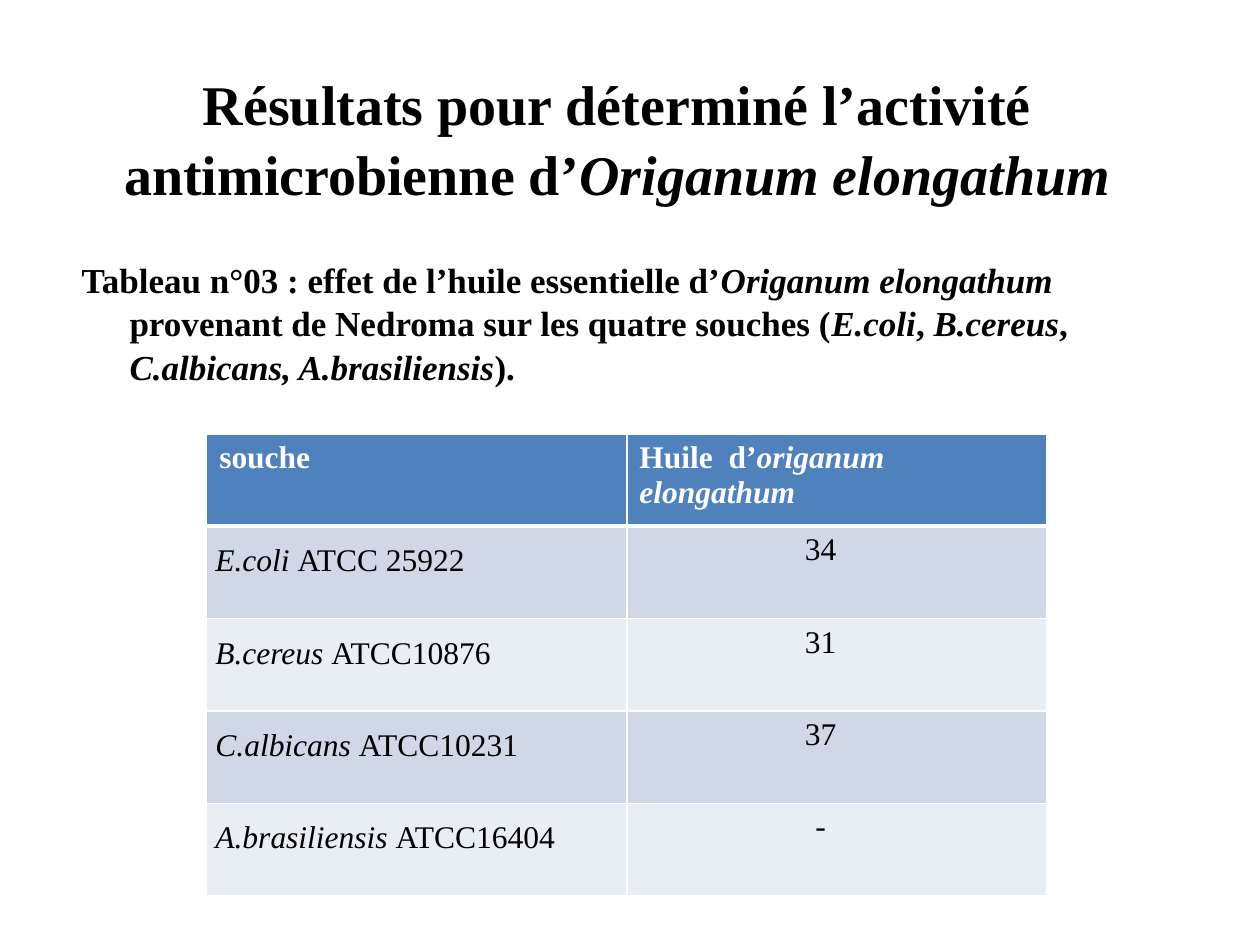
from lxml import etree
from pptx import Presentation
from pptx.dml.color import RGBColor
from pptx.enum.text import MSO_ANCHOR, PP_ALIGN
from pptx.oxml.ns import qn
from pptx.util import Inches, Pt

CENTER, JUSTIFY, LEFT = PP_ALIGN.CENTER, PP_ALIGN.JUSTIFY, PP_ALIGN.LEFT
MIDDLE, TOP = MSO_ANCHOR.MIDDLE, MSO_ANCHOR.TOP
BLACK = RGBColor(0x00, 0x00, 0x00)
WHITE = RGBColor(0xFF, 0xFF, 0xFF)
BLUE = RGBColor(0x4F, 0x81, 0xBD)
BANDS = RGBColor(0xD0, 0xD8, 0xE8), RGBColor(0xE9, 0xED, 0xF4)
FONT = "Times New Roman"
WIDTH, HEIGHT = 10, 7.5

TITLE = [("Résultats pour déterminé l’activité antimicrobienne d’", False),
         ("Origanum elongathum", True)]
CAPTION = [("Tableau n°03 : effet de l’huile essentielle d’", False),
           ("Origanum elongathum ", True),
           ("provenant de Nedroma sur les quatre souches (", False),
           ("E.coli", True), (", ", False), ("B.cereus", True), (", ", False),
           ("C.albicans, A.brasiliensis", True), (").", False)]
HEADS = [[("souche", False)],
         [("Huile  d’", False), ("origanum elongathum", True)]]
STRAINS = [("E.coli", "ATCC 25922", "34"),
           ("B.cereus", "ATCC10876", "31"),
           ("C.albicans", "ATCC10231", "37"),
           ("A.brasiliensis", "ATCC16404", "-")]


def write(frame, runs, size=18, color=BLACK, bold=False, align=LEFT, lines=1.0):
    """Fill the first paragraph with (text, italic) runs."""
    para = frame.paragraphs[0]
    para.alignment = align
    para.line_spacing = lines
    para.space_before = Pt(0)
    for text, slant in runs:
        run = para.add_run()
        run.text = text
        font = run.font
        font.name, font.size = FONT, Pt(size)
        font.bold, font.italic = bold, slant
        font.color.rgb = color
    return para


def edge(cell, side, width):
    """Draw one white cell border; side is L, R, T or B."""
    line = etree.SubElement(cell._tc.get_or_add_tcPr(), qn(f"a:ln{side}"),
                            w=str(Pt(width)))
    fill = etree.SubElement(line, qn("a:solidFill"))
    etree.SubElement(fill, qn("a:srgbClr"), val=str(WHITE))


class Deck:
    def __init__(self):
        self.file = Presentation()
        self.file.slide_width = Inches(WIDTH)
        self.file.slide_height = Inches(HEIGHT)
        self.slide = self.file.slides.add_slide(self.file.slide_layouts[5])

    def area(self, left, top, width, height):
        """Turn shares of the slide into lengths."""
        return (Inches(left * WIDTH), Inches(top * HEIGHT),
                Inches(width * WIDTH), Inches(height * HEIGHT))

    def title(self, runs, *share):
        shape = self.slide.shapes.title
        shape.left, shape.top, shape.width, shape.height = self.area(*share)
        frame = shape.text_frame
        frame.word_wrap = True
        frame.vertical_anchor = MIDDLE
        write(frame, runs, size=32, bold=True, align=CENTER, lines=1.04)

    def caption(self, runs, *share):
        frame = self.slide.shapes.add_textbox(*self.area(*share)).text_frame
        frame.word_wrap = True
        para = write(frame, runs, size=20, bold=True, lines=1.04)
        props = para._p.get_or_add_pPr()
        props.set("marL", str(Inches(0.38)))
        props.set("indent", str(Inches(-0.38)))

    def cell(self, cell, fill, runs, base=1, **style):
        for side, width in zip("LRTB", (1, 1, 1, base)):
            edge(cell, side, width)
        cell.fill.solid()
        cell.fill.fore_color.rgb = fill
        cell.vertical_anchor = TOP
        write(cell.text_frame, runs, **style)

    def table(self, heads, rows, *share):
        grid = self.slide.shapes.add_table(
            len(rows) + 1, len(heads), *self.area(*share)).table
        grid.horz_banding = False
        for col, runs in enumerate(heads):
            self.cell(grid.cell(0, col), BLUE, runs, base=3,
                      color=WHITE, bold=True)
        for row, (name, code, value) in enumerate(rows, 1):
            fill = BANDS[(row - 1) % 2]
            strain, zone = grid.cell(row, 0), grid.cell(row, 1)
            strain.margin_left = strain.margin_right = Inches(0.07)
            strain.margin_top = strain.margin_bottom = 0
            self.cell(strain, fill, [(name + " ", True), (code, False)],
                      align=JUSTIFY, lines=1.5)
            zone.margin_right = Inches(0.36)
            self.cell(zone, fill, [(value, False)], align=CENTER)


def main():
    deck = Deck()
    deck.title(TITLE, 0.04, 0.07, 0.9, 0.15)
    deck.caption(CAPTION, 0.055, 0.265, 0.9, 0.15)
    deck.table(HEADS, STRAINS, 0.164, 0.459, 0.667, 0.489)
    deck.file.save("out.pptx")


if __name__ == "__main__":
    main()
